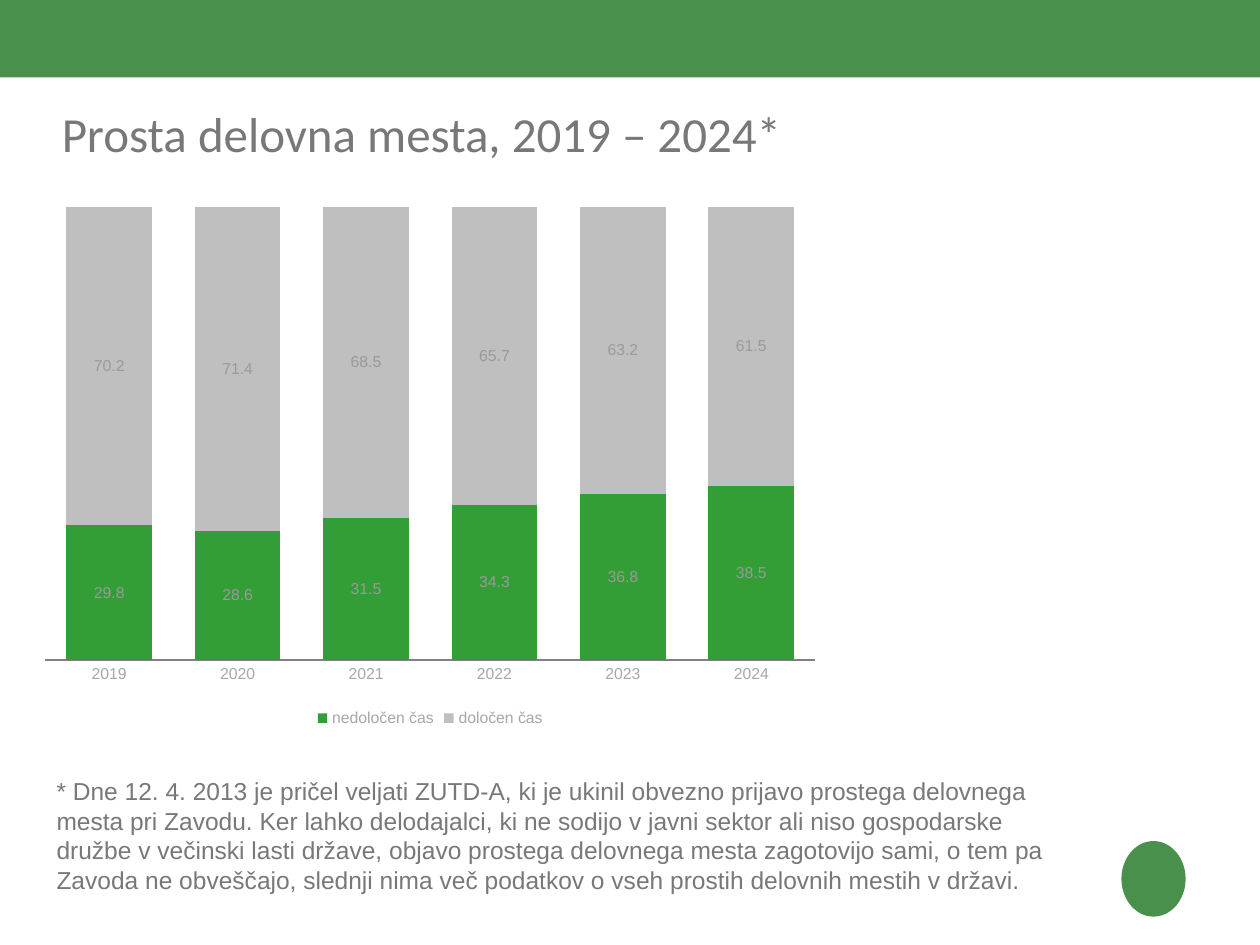
import pptx
import pptx.chart.data
import pptx.dml.color
import pptx.enum.chart
import pptx.enum.shapes
import pptx.enum.text
import pptx.oxml
import pptx.oxml.ns
import pptx.util

GREEN, TEXT, AXIS_TEXT, LABEL_TEXT = "49904D", "797777", "A8A7A7", "9B9999"


def color(hex_string):
    return pptx.dml.color.RGBColor.from_string(hex_string)


class SlideBuilder:
    """Holds the style and the slide; places are shares of the slide's size."""

    def __init__(self, presentation, layout_index):
        self.width = presentation.slide_width
        self.height = presentation.slide_height
        self.slide = presentation.slides.add_slide(presentation.slide_layouts[layout_index])

    def place(self, left, top, width, height):
        return (int(left * self.width), int(top * self.height),
                int(width * self.width), int(height * self.height))

    def font(self, font, size, hex_string, name="Arial"):
        font.size, font.name = pptx.util.Pt(size), name
        font.color.rgb = color(hex_string)

    def block(self, kind, box, fill):
        shape = self.slide.shapes.add_shape(kind, *self.place(*box))
        shape.shadow.inherit = False
        shape.fill.solid()
        shape.fill.fore_color.rgb = color(fill)
        shape.line.fill.background()

    def add_text(self, shape, text, size, name, margins=None):
        frame = shape.text_frame
        frame.word_wrap = True
        frame.auto_size = pptx.enum.text.MSO_AUTO_SIZE.NONE
        frame.vertical_anchor = pptx.enum.text.MSO_ANCHOR.TOP
        if margins is not None:
            frame.margin_left = frame.margin_right = margins
            frame.margin_top = frame.margin_bottom = margins
        paragraph = frame.paragraphs[0]
        paragraph.alignment = pptx.enum.text.PP_ALIGN.LEFT
        run = paragraph.add_run()
        run.text = text
        self.font(run.font, size, TEXT, name)

    def title(self, box, text):
        shape = self.slide.shapes.title
        shape.left, shape.top, shape.width, shape.height = self.place(*box)
        self.add_text(shape, text, 28, "Calibri", margins=0)

    def note(self, box, text):
        self.add_text(self.slide.shapes.add_textbox(*self.place(*box)), text, 14, "Arial")

    def stacked_columns(self, box, categories, series_table, plot_area):
        data = pptx.chart.data.CategoryChartData(number_format="#,##0.0")
        data.categories = categories
        for name, (values, _) in series_table.items():
            data.add_series(name, values)
        chart = self.slide.shapes.add_chart(
            pptx.enum.chart.XL_CHART_TYPE.COLUMN_STACKED, *self.place(*box), data).chart
        chart.has_title = False
        self.font(chart.font, 10, TEXT)

        # Columns and their labels
        plot = chart.plots[0]
        plot.gap_width, plot.overlap, plot.vary_by_categories = 50, 100, False
        for series, (_, fill) in zip(plot.series, series_table.values()):
            series.format.fill.solid()
            series.format.fill.fore_color.rgb = color(fill)
            labels = series.data_labels
            labels.show_value = True
            labels.number_format, labels.number_format_is_linked = "#,##0.0", False
            self.font(labels.font, 9, LABEL_TEXT)

        # Axes
        for axis in (chart.category_axis, chart.value_axis):
            axis.has_major_gridlines = False
            axis.major_tick_mark = axis.minor_tick_mark = pptx.enum.chart.XL_TICK_MARK.NONE
            self.font(axis.tick_labels.font, 9, AXIS_TEXT)
        chart.category_axis.format.line.color.rgb = color("808080")
        chart.category_axis.format.line.width = pptx.util.Pt(1.25)
        chart.value_axis.minimum_scale, chart.value_axis.maximum_scale = 0, 100
        chart.value_axis.tick_label_position = pptx.enum.chart.XL_TICK_LABEL_POSITION.NONE
        chart.value_axis.format.line.fill.background()

        # Legend
        chart.has_legend = True
        chart.legend.position = pptx.enum.chart.XL_LEGEND_POSITION.BOTTOM
        chart.legend.include_in_layout = False
        self.font(chart.legend.font, 9, AXIS_TEXT)

        # Fixed inner plot area
        area = chart.element.find(".//" + pptx.oxml.ns.qn("c:plotArea"))
        for layout in area.findall(pptx.oxml.ns.qn("c:layout")):
            area.remove(layout)
        sizes = "".join(f'<c:{key} val="{share}"/>' for key, share in zip("xywh", plot_area))
        area.insert(0, pptx.oxml.parse_xml(
            f'<c:layout {pptx.oxml.ns.nsdecls("c")}><c:manualLayout>'
            '<c:layoutTarget val="inner"/><c:xMode val="edge"/><c:yMode val="edge"/>'
            f'{sizes}</c:manualLayout></c:layout>'))


def main():
    presentation = pptx.Presentation()
    presentation.slide_width = pptx.util.Inches(10)
    presentation.slide_height = pptx.util.Inches(7.5)
    builder = SlideBuilder(presentation, layout_index=5)
    shapes = pptx.enum.shapes.MSO_SHAPE

    # Header band and plain emblem
    builder.block(shapes.RECTANGLE, (0, 0, 1, 0.082), GREEN)
    builder.block(shapes.OVAL, (0.89, 0.89, 0.051, 0.08), GREEN)

    # Title
    builder.title((0.049, 0.11, 0.926, 0.095), "Prosta delovna mesta, 2019 – 2024*")

    # Shares of vacancies by contract length
    builder.stacked_columns(
        (0.023, 0.208, 0.637, 0.567),
        [str(year) for year in range(2019, 2025)],
        {"nedoločen čas": ([29.8, 28.6, 31.5, 34.3, 36.8, 38.5], "339E35"),
         "določen čas": ([70.2, 71.4, 68.5, 65.7, 63.2, 61.5], "BFBFBF")},
        plot_area=(0.02, 0.02, 0.96, 0.846))

    # Footnote
    builder.note(
        (0.035, 0.815, 0.835, 0.139),
        "* Dne 12. 4. 2013 je pričel veljati ZUTD-A, ki je ukinil obvezno prijavo prostega "
        "delovnega mesta pri Zavodu. Ker lahko delodajalci, ki ne sodijo v javni sektor ali "
        "niso gospodarske družbe v večinski lasti države, objavo prostega delovnega mesta "
        "zagotovijo sami, o tem pa Zavoda ne obveščajo, slednji nima več podatkov o vseh "
        "prostih delovnih mestih v državi.")

    presentation.save("out.pptx")


if __name__ == "__main__":
    main()
